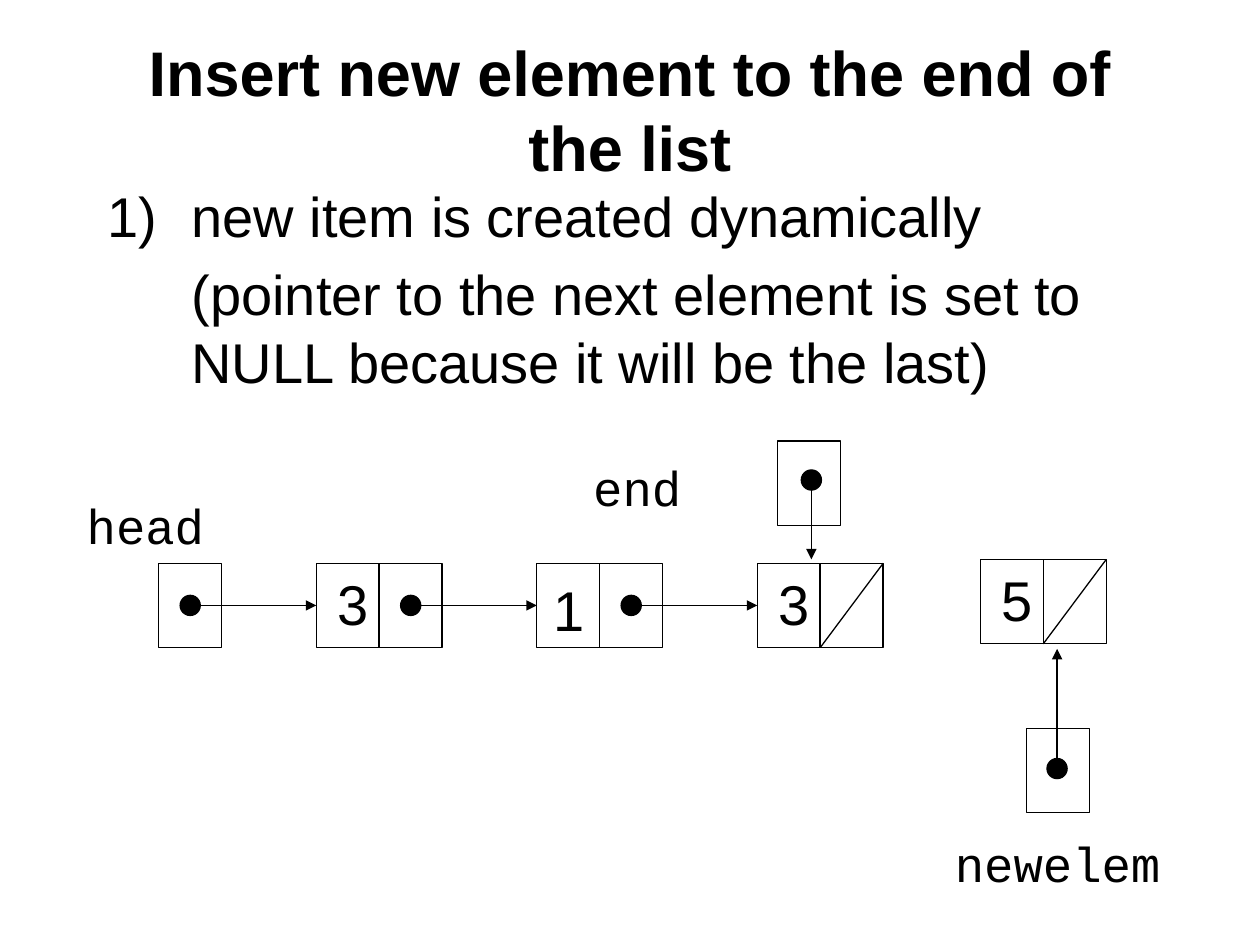
from lxml.etree import SubElement
from pptx import Presentation
from pptx.dml.color import RGBColor
from pptx.enum.shapes import MSO_CONNECTOR, MSO_SHAPE
from pptx.enum.text import MSO_ANCHOR, MSO_AUTO_SIZE, PP_ALIGN
from pptx.oxml.ns import qn
from pptx.util import Inches, Pt

COLORS = {"ink": "000000", "paper": "FFFFFF"}
CELL_W, CELL_H, DOT = 0.5, 0.67, 0.16
ROW_TOP, NODE_LEFT, NODE_PITCH = 4.47, 2.51, 1.75


def color(key):
    """Return the named palette colour."""
    return RGBColor.from_string(COLORS[key])


def box(left, top, width, height):
    """Convert a box in inches to lengths."""
    return [Inches(value) for value in (left, top, width, height)]


def style_runs(frame, font, size, bold=False):
    """Format every run of a text frame."""
    for paragraph in frame.paragraphs:
        for run in paragraph.runs:
            run.font.name, run.font.size, run.font.bold = font, Pt(size), bold
            run.font.color.rgb = color("ink")


def place(placeholder, area, anchor):
    """Move a placeholder to its area and return its text frame."""
    placeholder.left, placeholder.top, placeholder.width, placeholder.height = box(*area)
    frame = placeholder.text_frame
    frame.auto_size, frame.vertical_anchor = MSO_AUTO_SIZE.NONE, anchor
    return frame


def add_heading(slide, area):
    """Fill the title placeholder."""
    frame = place(slide.shapes.title, area, MSO_ANCHOR.MIDDLE)
    frame.text = "Insert new element to the end of the list"
    frame.paragraphs[0].alignment = PP_ALIGN.CENTER
    style_runs(frame, "Arial", 36, True)


def add_steps(slide, area):
    """Fill the body placeholder with the numbered step and its remark."""
    frame = place(slide.placeholders[1], area, MSO_ANCHOR.TOP)
    frame.text = ("new item is created dynamically\n"
                  "(pointer to the next element is set to NULL because it will be the last)")
    for paragraph, numbered in zip(frame.paragraphs, (True, False)):
        properties = paragraph._p.get_or_add_pPr()
        properties.set("marL", str(Inches(0.67)))
        properties.set("indent", str(Inches(-0.67) if numbered else 0))
        if numbered:
            SubElement(properties, qn("a:buFont"), typeface="Arial")
            SubElement(properties, qn("a:buAutoNum"), type="arabicParenR")
        else:
            SubElement(properties, qn("a:buNone"))
    style_runs(frame, "Arial", 32)


def add_text(slide, area, text, font, size, alignment=PP_ALIGN.LEFT):
    """Add a one-line text."""
    frame = slide.shapes.add_textbox(*box(*area)).text_frame
    frame.word_wrap = False
    frame.text = text
    frame.paragraphs[0].alignment = alignment
    style_runs(frame, font, size)


def add_outlined(slide, kind, area, fill=None):
    """Add a thinly outlined shape."""
    shape = slide.shapes.add_shape(kind, *box(*area))
    shape.shadow.inherit = False
    if fill:
        shape.fill.solid()
        shape.fill.fore_color.rgb = color(fill)
    else:
        shape.fill.background()
    shape.line.color.rgb, shape.line.width = color("ink"), Pt(0.75)


def add_line(slide, start, end, width=0.75, arrow=False):
    """Draw a straight line, optionally ending in an arrowhead."""
    ends = [Inches(value) for value in (*start, *end)]
    connector = slide.shapes.add_connector(MSO_CONNECTOR.STRAIGHT, *ends)
    connector.line.color.rgb, connector.line.width = color("ink"), Pt(width)
    if arrow:
        SubElement(connector.line._get_or_add_ln(), qn("a:tailEnd"), type="triangle")
    SubElement(connector._element.spPr, qn("a:effectLst"))


def add_cell(slide, left, top):
    """Draw one memory cell."""
    add_outlined(slide, MSO_SHAPE.RECTANGLE, (left, top, CELL_W, CELL_H))


def add_pointer(slide, start, end):
    """Draw a dot with an arrow to the target."""
    x, y = start
    add_outlined(slide, MSO_SHAPE.OVAL, (x - DOT / 2, y - DOT / 2, DOT, DOT), "ink")
    add_line(slide, start, end, 1, True)


def add_node(slide, left, top, value, value_offset=(0.07, 0), last=False):
    """Draw a list node with its value and a next pointer or a NULL slash."""
    middle = left + CELL_W
    add_cell(slide, left, top)
    add_cell(slide, middle, top)
    dx, dy = value_offset
    add_text(slide, (left + dx, top + dy, 0.45, 0.63), value, "Arial", 32, PP_ALIGN.CENTER)
    if last:
        add_line(slide, (middle + CELL_W, top), (middle, top + CELL_H))
    else:
        add_next(slide, middle, top)


def add_next(slide, left, top):
    """Draw the pointer from a cell to the next node in the row."""
    x, y = left + CELL_W / 2, top + 0.335
    add_pointer(slide, (x, y), (x + 1, y))


def add_named_pointer(slide, cell, label, label_area):
    """Draw a pointer variable's cell and its name."""
    add_cell(slide, *cell)
    add_text(slide, label_area, label, "Courier New", 28)


def add_list(slide, left, top):
    """Draw the existing list with its head and end pointers."""
    head = left - 1.25
    add_named_pointer(slide, (head, top), "head", (0.59, 3.88, 1.14, 0.57))
    add_next(slide, head, top)
    nodes = [("3", (0.07, 0)), ("1", (0.03, 0.05)), ("3", (0.07, 0))]
    for index, (value, offset) in enumerate(nodes):
        add_node(slide, left + index * NODE_PITCH, top, value, offset, index == len(nodes) - 1)
    add_named_pointer(slide, (6.17, 3.5), "end", (4.61, 3.58, 0.91, 0.57))
    add_pointer(slide, (6.44, 3.81), (6.44, 4.44))


def add_new_element(slide, left, top):
    """Draw the new node and the pointer to it."""
    add_node(slide, left, top, "5", last=True)
    add_named_pointer(slide, (8.15, 5.78), "newelem", (7.48, 6.57, 1.85, 0.57))
    add_pointer(slide, (8.39, 6.1), (8.39, 5.15))


def main():
    """Build and save the slide."""
    deck = Presentation()
    deck.slide_width, deck.slide_height = Inches(10), Inches(7.5)
    slide = deck.slides.add_slide(deck.slide_layouts[1])
    slide.background.fill.solid()
    slide.background.fill.fore_color.rgb = color("paper")
    add_heading(slide, (0.75, 0.36, 8.5, 1.01))
    add_steps(slide, (0.75, 1.39, 8.5, 1.73))
    add_list(slide, NODE_LEFT, ROW_TOP)
    add_new_element(slide, 7.78, 4.44)
    deck.save("out.pptx")


if __name__ == "__main__":
    main()
